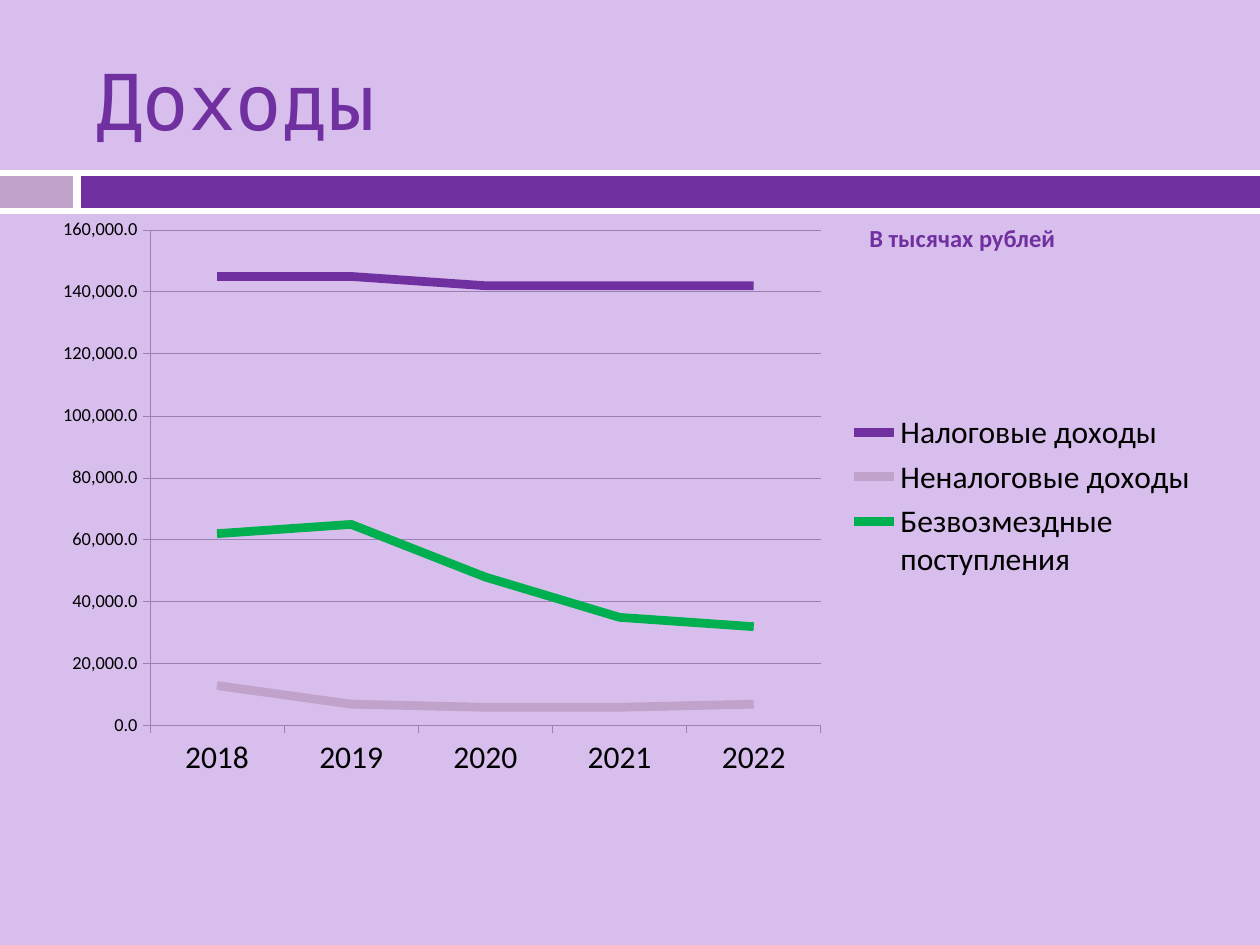
"""Build the slide with the line chart of revenue by type."""
from lxml import etree
from pptx import Presentation
from pptx.chart.data import CategoryChartData
from pptx.dml.color import RGBColor
from pptx.enum.chart import XL_CHART_TYPE, XL_LEGEND_POSITION, XL_TICK_MARK
from pptx.enum.shapes import MSO_SHAPE
from pptx.enum.text import MSO_ANCHOR, PP_ALIGN
from pptx.oxml.ns import qn
from pptx.util import Emu, Pt

LINE_CHART = XL_CHART_TYPE.LINE
LEGEND_RIGHT = XL_LEGEND_POSITION.RIGHT
TICK_OUTSIDE = XL_TICK_MARK.OUTSIDE
RECTANGLE = MSO_SHAPE.RECTANGLE
MIDDLE = MSO_ANCHOR.MIDDLE
LEFT = PP_ALIGN.LEFT

LILAC = RGBColor(0xD8, 0xBE, 0xEC)
WHITE = RGBColor(0xFF, 0xFF, 0xFF)
MAUVE = RGBColor(0xC0, 0xA2, 0xCA)
PURPLE = RGBColor(0x70, 0x30, 0xA0)
GREEN = RGBColor(0x00, 0xB0, 0x50)
BLACK = RGBColor(0x00, 0x00, 0x00)
AXIS_COLOR = RGBColor(0x9B, 0x80, 0xB3)
EMU_PER_PX = 914400 / 126


def px(*lengths):
    return [Emu(round(length * EMU_PER_PX)) for length in lengths]


def set_font(font, **values):
    font.color.rgb = values.pop("color")
    for name, value in values.items():
        setattr(font, name, value)


presentation = Presentation()
presentation.slide_width, presentation.slide_height = px(1260, 945)
slide = presentation.slides.add_slide(presentation.slide_layouts[5])
slide.background.fill.solid()
slide.background.fill.fore_color.rgb = LILAC

for box, color in (
    ((0, 170, 1260, 44), WHITE),
    ((0, 176, 73, 32), MAUVE),
    ((81, 176, 1179, 32), PURPLE),
):
    shape = slide.shapes.add_shape(RECTANGLE, *px(*box))
    shape.shadow.inherit = False
    shape.fill.solid()
    shape.fill.fore_color.rgb = color
    shape.line.fill.background()

title = slide.shapes.title
title.left, title.top, title.width, title.height = px(84, 32, 1124, 136)
title.text_frame.text = "Доходы"
title.text_frame.vertical_anchor = MIDDLE
paragraph = title.text_frame.paragraphs[0]
paragraph.alignment = LEFT
set_font(paragraph.runs[0].font, name="DejaVu Sans Mono", size=Pt(44), color=PURPLE)

revenues = (
    ("Налоговые доходы", (145000, 145000, 142000, 142000, 142000), PURPLE),
    ("Неналоговые доходы", (13000, 7000, 6000, 6000, 7000), MAUVE),
    ("Безвозмездные поступления", (62000, 65000, 48000, 35000, 32000), GREEN),
)
chart_data = CategoryChartData(number_format="#,##0.0")
chart_data.categories = [str(year) for year in range(2018, 2023)]
for name, values, color in revenues:
    chart_data.add_series(name, values)

chart_box = (39, 207, 1172, 581)
chart = slide.shapes.add_chart(LINE_CHART, *px(*chart_box), chart_data).chart
chart.has_title = False
set_font(chart.font, name="Calibri", size=Pt(18), color=BLACK)
chart.has_legend = True
chart.legend.position = LEGEND_RIGHT
chart.legend.include_in_layout = False

plot = chart.plots[0]
plot.vary_by_categories = False
for series, (name, values, color) in zip(plot.series, revenues):
    series.smooth = False
    series.format.line.width = Pt(5)
    series.format.line.color.rgb = color

value_axis = chart.value_axis
axis_values = {
    "minimum_scale": 0,
    "maximum_scale": 160000,
    "major_unit": 20000,
    "has_major_gridlines": True,
}
for name, value in axis_values.items():
    setattr(value_axis, name, value)
value_axis.tick_labels.number_format = "#,##0.0"
value_axis.tick_labels.number_format_is_linked = False
set_font(value_axis.tick_labels.font, name="Calibri", size=Pt(10.5), color=BLACK)
for axis in (chart.category_axis, value_axis):
    axis.major_tick_mark = TICK_OUTSIDE
for part in (chart.category_axis, value_axis, value_axis.major_gridlines):
    part.format.line.width = Pt(0.5)
    part.format.line.color.rgb = AXIS_COLOR

plot_area = plot._element.getparent()
for parent, target, box in (
    (plot_area, "inner", (150, 230, 671, 496)),
    (chart.legend._element, None, (847, 407, 350, 178)),
):
    for layout in parent.findall(qn("c:layout")):
        parent.remove(layout)
    layout = etree.Element(qn("c:layout"))
    manual = etree.SubElement(layout, qn("c:manualLayout"))
    left, top, width, height = box
    settings = {
        "layoutTarget": target,
        "xMode": "edge",
        "yMode": "edge",
        "x": round((left - chart_box[0]) / chart_box[2], 4),
        "y": round((top - chart_box[1]) / chart_box[3], 4),
        "w": round(width / chart_box[2], 4),
        "h": round(height / chart_box[3], 4),
    }
    for name, value in settings.items():
        if value is not None:
            etree.SubElement(manual, qn(f"c:{name}")).set("val", str(value))
    parent.insert(0 if target else 1, layout)

unit_box = slide.shapes.add_textbox(*px(857, 217, 286, 59))
unit_box.text_frame.word_wrap = True
unit_box.text_frame.text = "В тысячах рублей"
unit_run = unit_box.text_frame.paragraphs[0].runs[0]
set_font(unit_run.font, name="Calibri", size=Pt(14), bold=True, color=PURPLE)

presentation.save("out.pptx")
